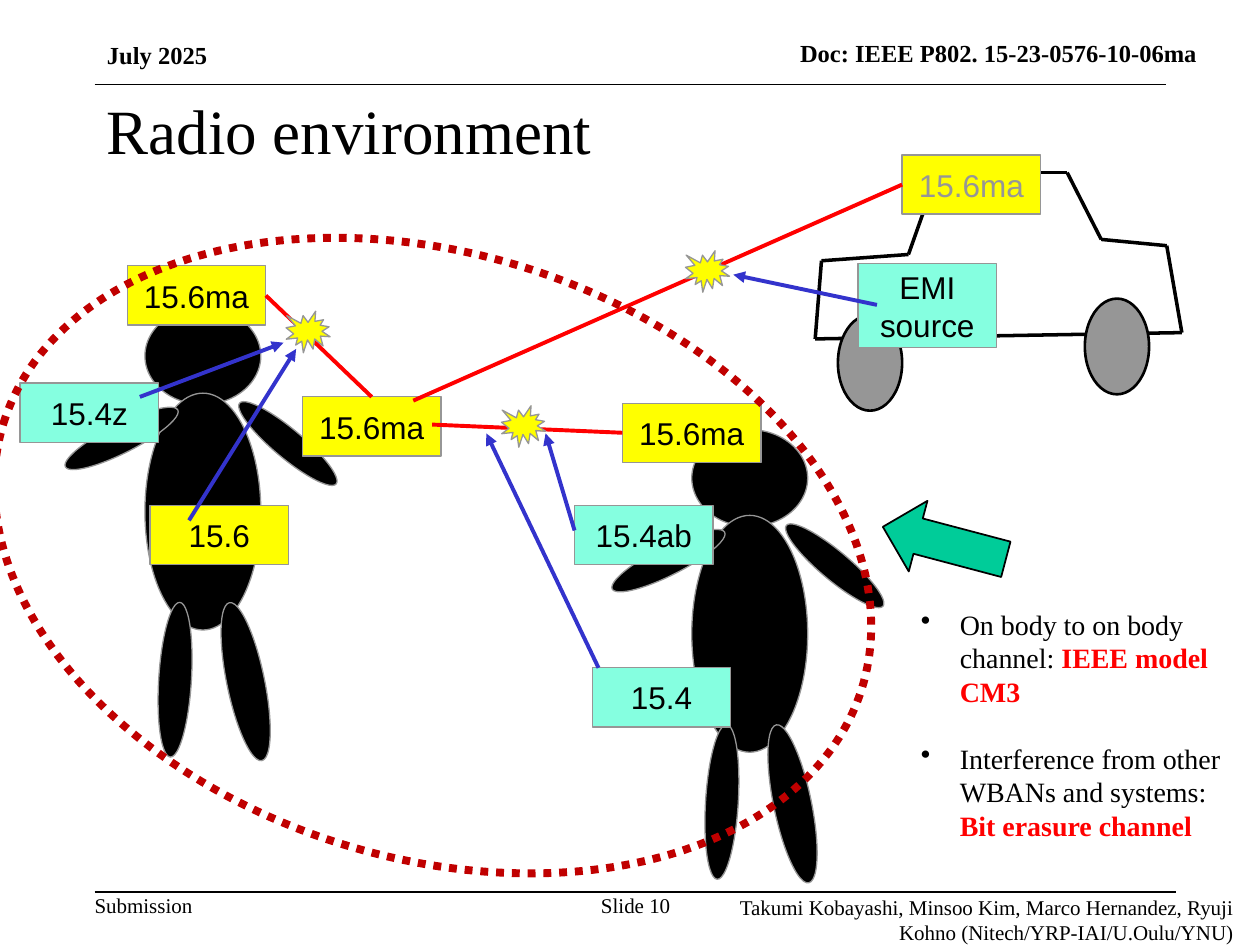
"""Build the radio environment slide: two bodies, a car and their interfering links."""
from itertools import pairwise
from pptx import Presentation
from pptx.dml.color import RGBColor
from pptx.enum.dml import MSO_LINE
from pptx.enum.shapes import MSO_CONNECTOR, MSO_SHAPE as Shape
from pptx.enum.text import MSO_ANCHOR as Anchor, PP_ALIGN as Align
from pptx.oxml.xmlchemy import OxmlElement
from pptx.util import Pt

PX = 9144
SERIF, SANS = "Times New Roman", "Arial"
COLOURS = {"black": "000000", "grey": "969696", "yellow": "FFFF00", "mint": "85FFE0",
           "red": "FF0000", "blue": "3333CC", "crimson": "C00000", "green": "00CC99"}
TOP, LEFT, RIGHT = 0, 1, 3

RULES = [((75, 67), (925, 67)), ((75, 708), (933, 708))]
CAPTIONS = [
    ("July 2025", (75, 41, 175, 24), 14, True, Align.LEFT, Anchor.BOTTOM, 10, True),
    ("Doc: IEEE P802. 15-23-0576-10-06ma", (421, 25, 539, 34), 14, True,
     Align.RIGHT, Anchor.TOP, 10, False),
    ("Radio environment", (75, 75, 850, 56), 36, False, Align.LEFT, Anchor.MIDDLE, 10, True),
    ("Submission", (75, 708, 78, 20), 12, False, Align.LEFT, Anchor.TOP, 0, False),
    ("Slide 10", (475, 708, 59, 20), 12, False, Align.CENTER, Anchor.TOP, 0, False),
    ("Takumi Kobayashi, Minsoo Kim, Marco Hernandez, Ryuji Kohno (Nitech/YRP-IAI/U.Oulu/YNU)",
     (534, 700, 455, 31), 12, False, Align.RIGHT, Anchor.TOP, 10, True),
]

BODY_ORIGINS = [(549, 341), (115, 244)]
BODY_PARTS = [
    ((0, 0, 92, 77), 0),
    ((0, 68, 92, 188), 0),
    ((-30, 54, 23, 100), 63.2),
    ((102, 58, 23, 100), 309.9),
    ((11, 234, 26, 123), 3.5),
    ((65, 233, 30, 128), 348.4),
]

CAR_OUTLINE = [(647, 269), (652, 207), (721, 202), (744, 137), (847, 137),
               (874, 190), (926, 195), (938, 264), (647, 269)]
WHEELS = [(665, 250, 51, 76), (861, 237, 51, 76)]

TAGS = {
    "second chest": ("15.4ab", 456, 401, 47, "mint", "black"),
    "first head": ("15.6ma", 101, 211, 47, "yellow", "black"),
    "first waist": ("15.6", 119, 401, 47, "yellow", "black"),
    "second waist": ("15.4", 470, 530, 47, "mint", "black"),
    "first hand": ("15.6ma", 240, 315, 47, "yellow", "black"),
    "first arm": ("15.4z", 16, 304, 47, "mint", "black"),
    "second head": ("15.6ma", 494, 320, 47, "yellow", "black"),
    "emi": ("EMI source", 681, 209, 67, "mint", "black"),
    "car": ("15.6ma", 716, 123, 47, "yellow", "grey"),
}
TAG_WIDTH = 110

LINKS = [
    ((211, 234), (295, 315), ("first head", RIGHT), ("first hand", TOP)),
    ((343, 337), (494, 343), None, ("second head", LEFT)),
    ((716, 146), (328, 318), ("car", LEFT), None),
]
INTERFERENCE = [
    ((111, 315), (225, 272)),
    ((150, 413), (235, 277)),
    ((456, 421), (433, 344)),
    ((475, 530), (386, 344)),
    ((696, 242), (582, 218)),
]
COLLISIONS = [(227, 247), (398, 322), (544, 199)]

CHANNELS = [
    ("On body to on body channel: ", "IEEE model CM3"),
    ("Interference from other WBANs and systems: ", "Bit erasure channel"),
]


def rgb(name):
    return RGBColor.from_string(COLOURS[name])


def emu(lengths):
    return [length * PX for length in lengths]


def draw(slide, kind, box, fill, outline, width, turn=0):
    shape = slide.shapes.add_shape(kind, *emu(box))
    shape.shadow.inherit = False
    shape.rotation = turn
    if fill:
        shape.fill.solid()
        shape.fill.fore_color.rgb = rgb(fill)
    else:
        shape.fill.background()
    shape.line.color.rgb = rgb(outline)
    shape.line.width = Pt(width)
    return shape


def connect(slide, start, end, colour, width, arrow=False):
    line = slide.shapes.add_connector(MSO_CONNECTOR.STRAIGHT, *emu(start + end))
    line.line.color.rgb = rgb(colour)
    line.line.width = Pt(width)
    if arrow:
        tail = OxmlElement("a:tailEnd")
        tail.set("type", "triangle")
        line.line._get_or_add_ln().append(tail)
    line._element.spPr.append(OxmlElement("a:effectLst"))
    return line


def style(run, font, size, colour="black", bold=False):
    run.font.name, run.font.size, run.font.bold = font, Pt(size), bold
    run.font.color.rgb = rgb(colour)


def add_caption(slide, text, box, size, bold, align, anchor, inset, wrap):
    frame = slide.shapes.add_textbox(*emu(box)).text_frame
    frame.word_wrap, frame.vertical_anchor = wrap, anchor
    frame.margin_left = frame.margin_right = inset * PX
    frame.margin_top = frame.margin_bottom = min(inset, 10 if wrap else 5) * PX
    frame.text = text
    frame.paragraphs[0].alignment = align
    style(frame.paragraphs[0].runs[0], SERIF, size, bold=bold)


def add_tag(slide, text, left, top, height, fill, colour):
    tag = draw(slide, Shape.RECTANGLE, (left, top, TAG_WIDTH, height), fill, "grey", 0.75)
    frame = tag.text_frame
    frame.text = text
    frame.vertical_anchor = Anchor.MIDDLE
    frame.paragraphs[0].alignment = Align.CENTER
    style(frame.paragraphs[0].runs[0], SANS, 18, colour)
    return tag


def add_channels(slide):
    frame = slide.shapes.add_textbox(*emu((721, 477, 267, 199))).text_frame
    frame.word_wrap = True
    for index, (topic, model) in enumerate(CHANNELS):
        item = frame.add_paragraph() if index else frame.paragraphs[0]
        item.space_before = Pt(19 * index)
        style_parts = [(topic, "black", False), (model, "red", True)]
        for text, colour, bold in style_parts:
            run = item.add_run()
            run.text = text
            style(run, SERIF, 16, colour, bold)
        properties = item._p.get_or_add_pPr()
        properties.set("marL", str(31 * PX))
        properties.set("indent", str(-31 * PX))
        bullet = OxmlElement("a:buChar")
        bullet.set("char", "•")
        properties.append(bullet)


def main():
    deck = Presentation()
    deck.slide_width, deck.slide_height = emu((1000, 750))
    slide = deck.slides.add_slide(deck.slide_layouts[6])

    for start, end in RULES:
        connect(slide, start, end, "black", 1)
    for x, y in BODY_ORIGINS:
        for (dx, dy, width, height), turn in BODY_PARTS:
            draw(slide, Shape.OVAL, (x + dx, y + dy, width, height), "black", "grey", 0.75, turn)
    for caption in CAPTIONS:
        add_caption(slide, *caption)
    for start, end in pairwise(CAR_OUTLINE):
        connect(slide, start, end, "black", 2)
    for wheel in WHEELS:
        draw(slide, Shape.OVAL, wheel, "grey", "black", 1.5)

    tags = {place: add_tag(slide, *tag) for place, tag in TAGS.items()}
    for start, end, source, target in LINKS:
        link = connect(slide, start, end, "red", 2.25)
        if source:
            link.begin_connect(tags[source[0]], source[1])
        if target:
            link.end_connect(tags[target[0]], target[1])
    for start, end in INTERFERENCE:
        connect(slide, start, end, "blue", 2.25, arrow=True)
    for x, y in COLLISIONS:
        draw(slide, Shape.EXPLOSION1, (x, y, 35, 33), "yellow", "grey", 0.75)

    coverage = draw(slide, Shape.OVAL, (-13, 201, 713, 480), None, "crimson", 4.5, 17.1)
    coverage.line.dash_style = MSO_LINE.ROUND_DOT
    draw(slide, Shape.LEFT_ARROW, (699, 402, 101, 58), "green", "black", 1, 14.8)
    add_channels(slide)
    deck.save("out.pptx")


if __name__ == "__main__":
    main()
